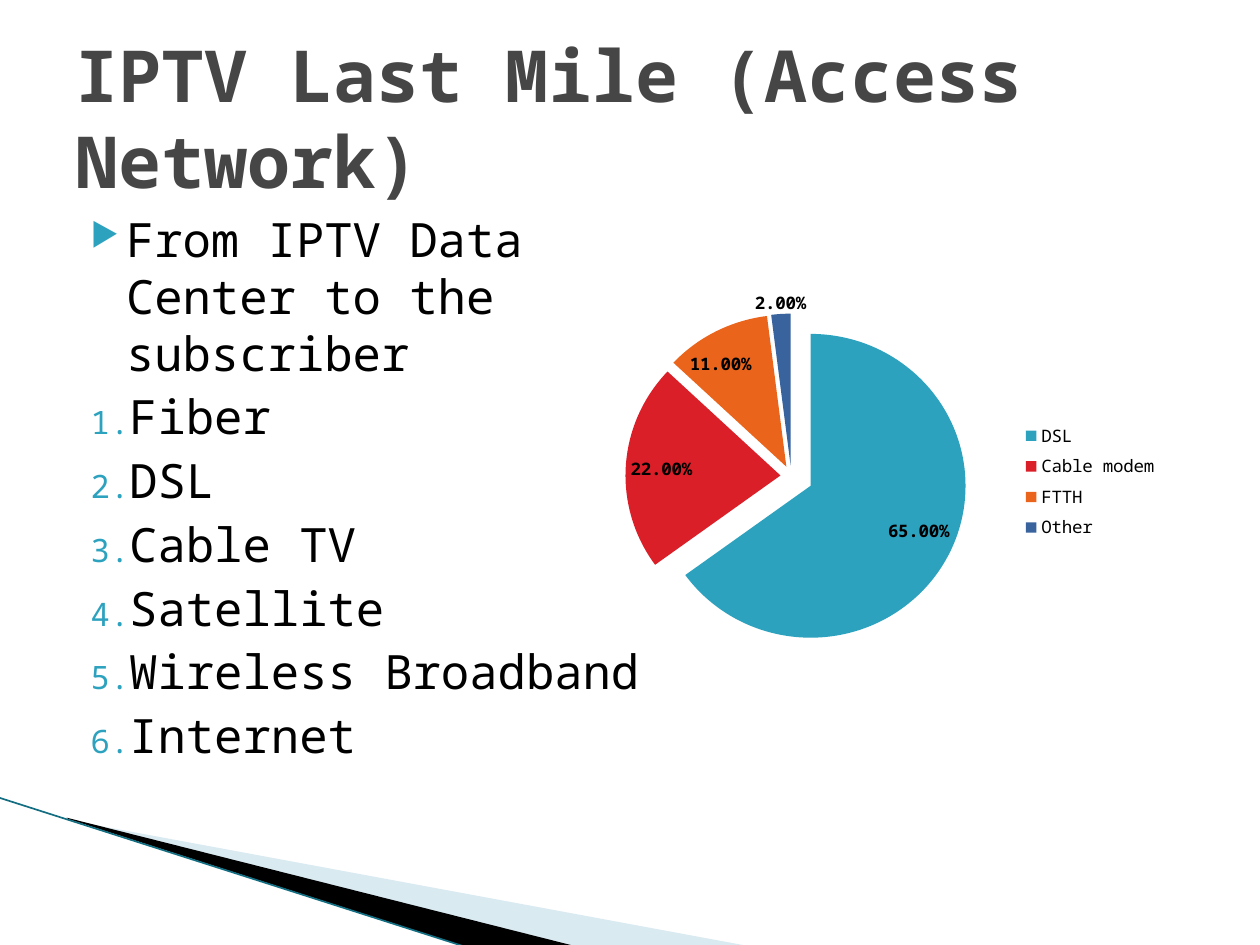
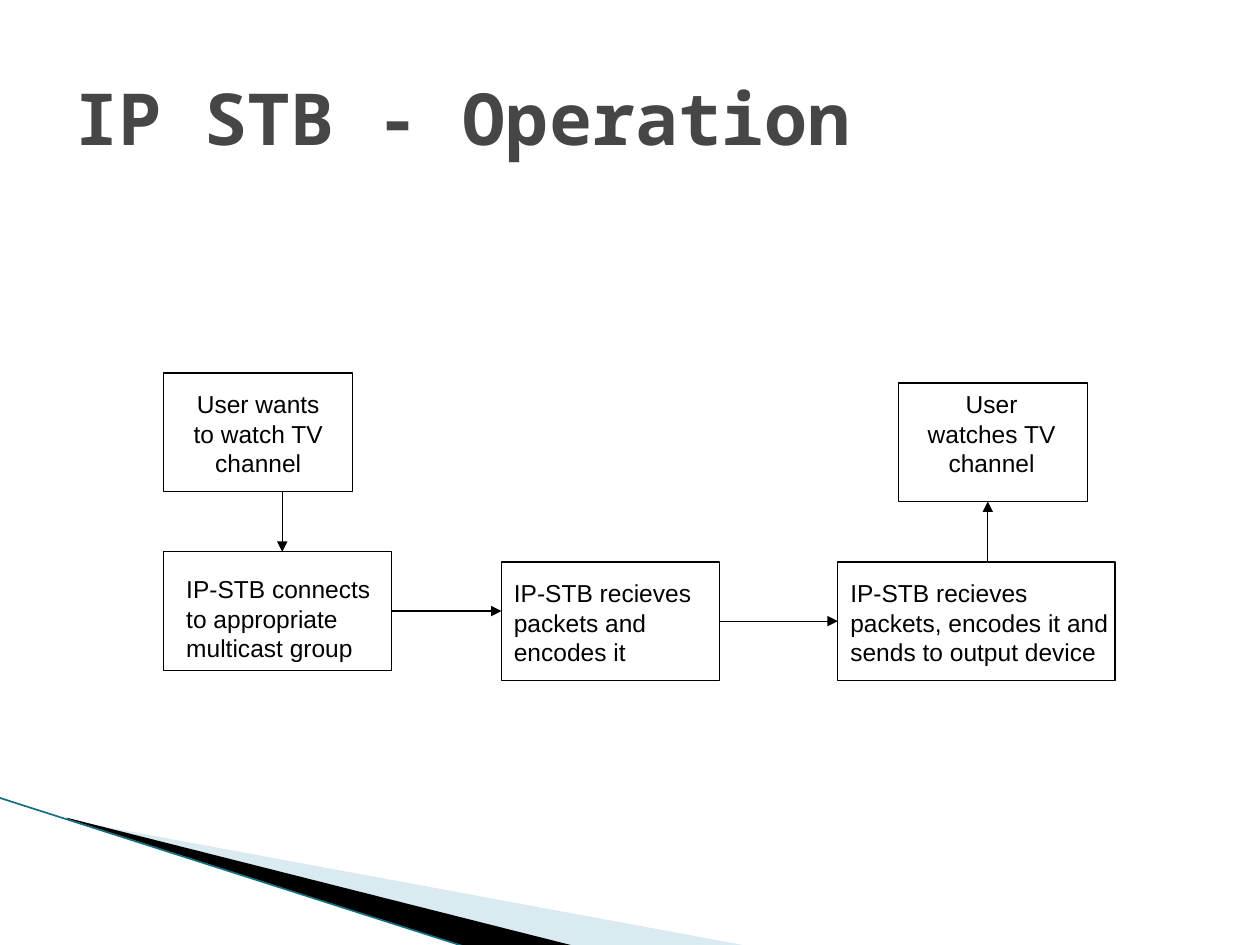
from dataclasses import dataclass
from typing import NamedTuple

from lxml import etree
from pptx import Presentation
from pptx import util as u
from pptx.chart.data import CategoryChartData
from pptx.dml.color import RGBColor
from pptx.enum import chart as ch, shapes as sh, text as tx
from pptx.oxml.ns import qn

SCALE = 9144  # 100 px to the inch


@dataclass(frozen=True)
class Theme:
    mono: str = "Noto Sans Mono"
    sans: str = "Arial"
    mark: str = "OpenSymbol"
    ink: str = "000000"
    head: str = "464646"
    teal: str = "2DA2BF"
    red: str = "DA1F28"
    flame: str = "EB641B"
    navy: str = "39639D"
    mist: str = "A0CBDC"
    edge: str = "146E82"
    title: int = 41
    body: int = 27
    note: int = 14
    chart: int = 10


THEME = Theme()


class Area(NamedTuple):
    left: int
    top: int
    width: int
    height: int


class Band(NamedTuple):
    frame: Area
    points: tuple[tuple[int, int], ...]
    color: str
    alpha: int = 100


class Step(NamedTuple):
    words: str
    box: Area
    note: Area
    align: tx.PP_ALIGN = tx.PP_ALIGN.LEFT


class Link(NamedTuple):
    start: tuple[int, int]
    end: tuple[int, int]
    source: tuple[int, int] | None = None  # step index, side
    target: tuple[int, int] | None = None


class Slice(NamedTuple):
    name: str
    share: float
    color: str
    burst: int = 7


BANDS = (
    Band(Area(78, 547, 416, 158),
         ((55, 651), (595, 751), (456, 751), (55, 650)), THEME.mist, 40),
    Band(Area(-6, 633, 416, 92),
         ((53, 649), (457, 751), (372, 752), (54, 650)), THEME.ink),
)
EDGE = Link((-1, 633), (371, 752))
TITLE = Area(50, 30, 900, 125)
LIST = Area(50, 162, 492, 495)
CHART = Area(458, 225, 479, 300)

LEAD = "From IPTV Data Center to the subscriber"
MEDIA = ("Fiber", "DSL", "Cable TV", "Satellite", "Wireless Broadband", "Internet")
SLICES = (
    Slice("DSL", 0.65, THEME.teal, 14),
    Slice("Cable modem", 0.22, THEME.red),
    Slice("FTTH", 0.11, THEME.flame),
    Slice("Other", 0.02, THEME.navy),
)
STEPS = (
    Step("User wants to watch TV channel",
         Area(130, 296, 150, 94), Area(138, 304, 134, 80), tx.PP_ALIGN.CENTER),
    Step("IP-STB connects to appropriate multicast group",
         Area(130, 438, 181, 94), Area(138, 451, 173, 80)),
    Step("IP-STB recieves packets and encodes it",
         Area(398, 446, 173, 94), Area(398, 454, 165, 80)),
    Step("IP-STB recieves packets, encodes it and sends to output device",
         Area(665, 446, 220, 94), Area(665, 454, 228, 80)),
    Step("User watches TV channel",
         Area(713, 304, 150, 94), Area(720, 304, 134, 80), tx.PP_ALIGN.CENTER),
)
LINKS = (
    Link((224, 390), (224, 438)),
    Link((311, 485), (398, 485), source=(1, 3)),
    Link((571, 493), (665, 493), source=(2, 3), target=(3, 1)),
    Link((784, 446), (784, 398)),
)


def px(*sizes: int) -> list[int]:
    return [size * SCALE for size in sizes]


def rgb(color: str) -> RGBColor:
    return RGBColor.from_string(color)


def style(font, face: str, size: int, color: str, bold: bool = False) -> None:
    font.name, font.size, font.bold = face, u.Pt(size), bold
    font.color.rgb = rgb(color)


def add_run(par, words: str, *look) -> None:
    run = par.add_run()
    run.text = words
    style(run.font, *look)


def place(shape, area: Area) -> None:
    shape.left, shape.top, shape.width, shape.height = px(*area)


def add_line(slide, link: Link, color: str, width: float):
    line = slide.shapes.add_connector(
        sh.MSO_CONNECTOR.STRAIGHT, *px(*link.start, *link.end))
    line.line.color.rgb = rgb(color)
    line.line.width = u.Pt(width)
    etree.SubElement(line.element.spPr, qn("a:effectLst"))
    return line


def set_frame(shape, frame: Area) -> None:
    """Give a freeform a new frame and keep its outline where it is."""
    left, top, width, height = px(*frame)
    outline = shape.element.find(".//" + qn("a:path"))
    for point in outline.iter(qn("a:pt")):
        point.set("x", str(int(point.get("x")) + shape.left - left))
        point.set("y", str(int(point.get("y")) + shape.top - top))
    outline.set("w", str(width))
    outline.set("h", str(height))
    place(shape, frame)


def add_band(slide, band: Band):
    first, *rest = [tuple(px(*point)) for point in band.points]
    pen = slide.shapes.build_freeform(*first)
    pen.add_line_segments(rest, close=True)
    shape = pen.convert_to_shape()
    set_frame(shape, band.frame)
    shape.shadow.inherit = False
    shape.fill.solid()
    shape.fill.fore_color.rgb = rgb(band.color)
    shape.line.fill.background()
    if band.alpha < 100:
        tint = shape.element.spPr.find(".//" + qn("a:srgbClr"))
        etree.SubElement(tint, qn("a:alpha"), val=str(band.alpha * 1000))
    return shape


def dress_master(deck, slide) -> None:
    """Draw the corner bands on a slide, then move them to the master."""
    parts = [add_band(slide, band) for band in BANDS]
    parts.append(add_line(slide, EDGE, THEME.edge, 0.95))
    tree = deck.slide_master.shapes.element
    for index, part in enumerate(parts, 101):
        part.element.find(".//" + qn("p:cNvPr")).set("id", str(index))
        tree.append(part.element)


def add_slide(deck, layout: int, words: str):
    slide = deck.slides.add_slide(deck.slide_layouts[layout])
    title = slide.shapes.title
    place(title, TITLE)
    frame = title.text_frame
    frame.auto_size = tx.MSO_AUTO_SIZE.NONE
    frame.vertical_anchor = tx.MSO_ANCHOR.MIDDLE
    par = frame.paragraphs[0]
    par.alignment = tx.PP_ALIGN.LEFT
    add_run(par, words, THEME.mono, THEME.title, THEME.head, True)
    return slide


def add_bullet(par, face: str, tag: str, **mark: str) -> None:
    props = par._p.get_or_add_pPr()
    left, hang = px(40, 28)
    props.set("marL", str(left))
    props.set("indent", str(-hang))
    tint = etree.SubElement(props, qn("a:buClr"))
    etree.SubElement(tint, qn("a:srgbClr"), val=THEME.teal)
    etree.SubElement(props, qn("a:buSzPct"), val="68000")
    etree.SubElement(props, qn("a:buFont"), typeface=face)
    etree.SubElement(props, qn(tag), **mark)


def fill_list(body) -> None:
    place(body, LIST)
    frame = body.text_frame
    frame.auto_size = tx.MSO_AUTO_SIZE.NONE
    for index, words in enumerate((LEAD, *MEDIA)):
        par = frame.add_paragraph() if index else frame.paragraphs[0]
        if index:
            add_bullet(par, THEME.mono, "a:buAutoNum", type="arabicPeriod")
        else:
            add_bullet(par, THEME.mark, "a:buChar", char="▶")
        par.space_before = u.Pt(4 if index else 0)
        add_run(par, words, THEME.mono, THEME.body, THEME.ink)


def set_layout(part, after: str | None = None, **sides) -> None:
    """Fix a chart part's place as fractions of the chart."""
    old = part.find(qn("c:layout"))
    if old is not None:
        part.remove(old)
    layout = etree.Element(qn("c:layout"))
    if after:
        part.find(qn(after)).addnext(layout)
    else:
        part.insert(0, layout)
    manual = etree.SubElement(layout, qn("c:manualLayout"))
    for name, value in sides.items():
        etree.SubElement(manual, qn("c:" + name), val=str(value))


def add_pie(slide) -> None:
    data = CategoryChartData(number_format="0.00%")
    data.categories = [part.name for part in SLICES]
    data.add_series("Series 1", [part.share for part in SLICES])
    chart = slide.shapes.add_chart(ch.XL_CHART_TYPE.PIE, *px(*CHART), data).chart
    style(chart.font, THEME.mono, THEME.chart, THEME.ink)
    chart.has_title = False
    chart.has_legend = True
    chart.legend.position = ch.XL_LEGEND_POSITION.RIGHT
    chart.legend.include_in_layout = False
    root = chart._chartSpace
    edges = {"xMode": "edge", "yMode": "edge"}
    set_layout(root.find(".//" + qn("c:plotArea")), layoutTarget="inner",
               **edges, x=0.06, y=0.09, w=0.59, h=0.82)
    set_layout(root.find(".//" + qn("c:legend")), "c:legendPos",
               **edges, x=0.72, y=0.34, w=0.26, h=0.35)

    plot = chart.plots[0]
    plot.vary_by_categories = True
    series = plot.series[0]
    for index, part in enumerate(SLICES):
        fill = series.points[index].format.fill
        fill.solid()
        fill.fore_color.rgb = rgb(part.color)
    for point, part in zip(series._element.findall(qn("c:dPt")), SLICES):
        burst = etree.Element(qn("c:explosion"), val=str(part.burst))
        point.find(qn("c:spPr")).addprevious(burst)
    labels = series.data_labels
    labels.show_value = True
    labels.number_format = "0.00%"
    labels.number_format_is_linked = False
    labels.position = ch.XL_LABEL_POSITION.BEST_FIT
    style(labels.font, THEME.mono, THEME.chart, THEME.ink, True)


def add_step(slide, step: Step):
    box = slide.shapes.add_shape(sh.MSO_SHAPE.RECTANGLE, *px(*step.box))
    box.shadow.inherit = False
    box.fill.background()
    box.line.color.rgb = rgb(THEME.ink)
    box.line.width = u.Pt(0.75)
    frame = slide.shapes.add_textbox(*px(*step.note)).text_frame
    frame.word_wrap = True
    frame.auto_size = tx.MSO_AUTO_SIZE.SHAPE_TO_FIT_TEXT
    par = frame.paragraphs[0]
    par.alignment = step.align
    add_run(par, step.words, THEME.sans, THEME.note, THEME.ink)
    return box


def add_arrow(slide, link: Link, boxes: list) -> None:
    line = add_line(slide, link, THEME.ink, 0.75)
    if link.source:
        index, side = link.source
        line.begin_connect(boxes[index], side)
    if link.target:
        index, side = link.target
        line.end_connect(boxes[index], side)
    etree.SubElement(line.line._get_or_add_ln(), qn("a:tailEnd"), type="triangle")


def main() -> None:
    deck = Presentation()
    deck.slide_width, deck.slide_height = px(1000, 750)
    access = add_slide(deck, 1, "IPTV Last Mile (Access Network)")
    dress_master(deck, access)
    fill_list(access.placeholders[1])
    add_pie(access)
    flow = add_slide(deck, 5, "IP STB - Operation")
    boxes = [add_step(flow, step) for step in STEPS]
    for link in LINKS:
        add_arrow(flow, link, boxes)
    deck.save("out.pptx")


if __name__ == "__main__":
    main()
